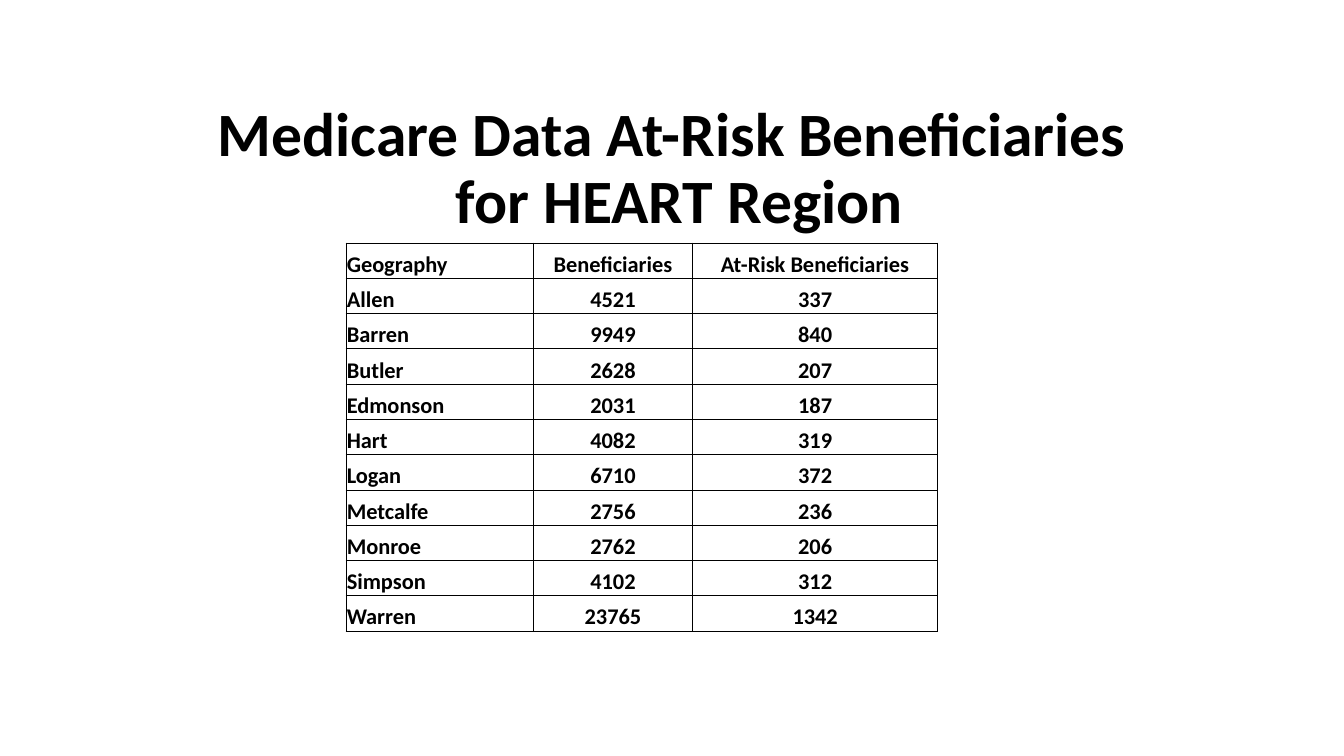
import dataclasses

import pptx
import pptx.dml.color
import pptx.enum.text
import pptx.oxml
import pptx.oxml.ns
import pptx.util
from pptx.util import Inches


@dataclasses.dataclass(frozen=True)
class Theme:
    font: str = "Calibri"
    ink: str = "000000"
    title_size: int = 44
    table_size: int = 16
    border_width: float = 0.5


THEME = Theme()
TITLE = "Medicare Data At-Risk Beneficiaries\v for HEART Region"
HEADERS = ("Geography", "Beneficiaries", "At-Risk Beneficiaries")
COUNTIES = (
    ("Allen", 4521, 337),
    ("Barren", 9949, 840),
    ("Butler", 2628, 207),
    ("Edmonson", 2031, 187),
    ("Hart", 4082, 319),
    ("Logan", 6710, 372),
    ("Metcalfe", 2756, 236),
    ("Monroe", 2762, 206),
    ("Simpson", 4102, 312),
    ("Warren", 23765, 1342),
)
COLUMN_WIDTHS = (1.86, 1.58, 2.43)
ROW_HEIGHT = 0.35


def format_paragraph(paragraph, size, alignment):
    paragraph.alignment = alignment
    for run in paragraph.runs:
        run.font.name = THEME.font
        run.font.size = pptx.util.Pt(size)
        run.font.bold = True
        run.font.color.rgb = pptx.dml.color.RGBColor.from_string(THEME.ink)


def set_title(slide):
    title = slide.shapes.title
    title.left, title.top = Inches(0.92), Inches(0.96)
    title.width, title.height = Inches(11.5), Inches(1.45)
    frame = title.text_frame
    frame.word_wrap = True
    frame.auto_size = pptx.enum.text.MSO_AUTO_SIZE.NONE
    frame.vertical_anchor = pptx.enum.text.MSO_ANCHOR.MIDDLE
    paragraph = frame.paragraphs[0]
    paragraph.text = TITLE
    paragraph.line_spacing = 0.9
    format_paragraph(paragraph, THEME.title_size, pptx.enum.text.PP_ALIGN.CENTER)


def add_borders(cell):
    properties = cell._tc.get_or_add_tcPr()
    namespace = pptx.oxml.ns.nsdecls("a")
    width = pptx.util.Pt(THEME.border_width)
    for position, side in enumerate(("lnL", "lnR", "lnT", "lnB")):
        border = pptx.oxml.parse_xml(
            f'<a:{side} {namespace} w="{width}"><a:solidFill>'
            f'<a:srgbClr val="{THEME.ink}"/></a:solidFill></a:{side}>'
        )
        properties.insert(position, border)


def fill_cell(cell, value, alignment):
    cell.fill.background()
    cell.margin_left = cell.margin_right = cell.margin_top = Inches(0.01)
    cell.margin_bottom = 0
    cell.vertical_anchor = pptx.enum.text.MSO_ANCHOR.BOTTOM
    cell.text_frame.text = str(value)
    format_paragraph(cell.text_frame.paragraphs[0], THEME.table_size, alignment)
    add_borders(cell)


def add_county_table(slide):
    rows = (HEADERS, *COUNTIES)
    table = slide.shapes.add_table(
        len(rows), len(HEADERS), Inches(3.43), Inches(2.41),
        Inches(sum(COLUMN_WIDTHS)), Inches(ROW_HEIGHT * len(rows)),
    ).table
    table.first_row = False
    table.horz_banding = False
    for column, width in zip(table.columns, COLUMN_WIDTHS):
        column.width = Inches(width)
    alignments = pptx.enum.text.PP_ALIGN
    for row, values in zip(table.rows, rows):
        row.height = Inches(ROW_HEIGHT)
        for index, value in enumerate(values):
            alignment = alignments.CENTER if index else alignments.LEFT
            fill_cell(row.cells[index], value, alignment)


def main():
    presentation = pptx.Presentation()
    presentation.slide_width = Inches(13.33)
    presentation.slide_height = Inches(7.5)
    slide = presentation.slides.add_slide(presentation.slide_layouts[5])
    set_title(slide)
    add_county_table(slide)
    presentation.save("out.pptx")


if __name__ == "__main__":
    main()
